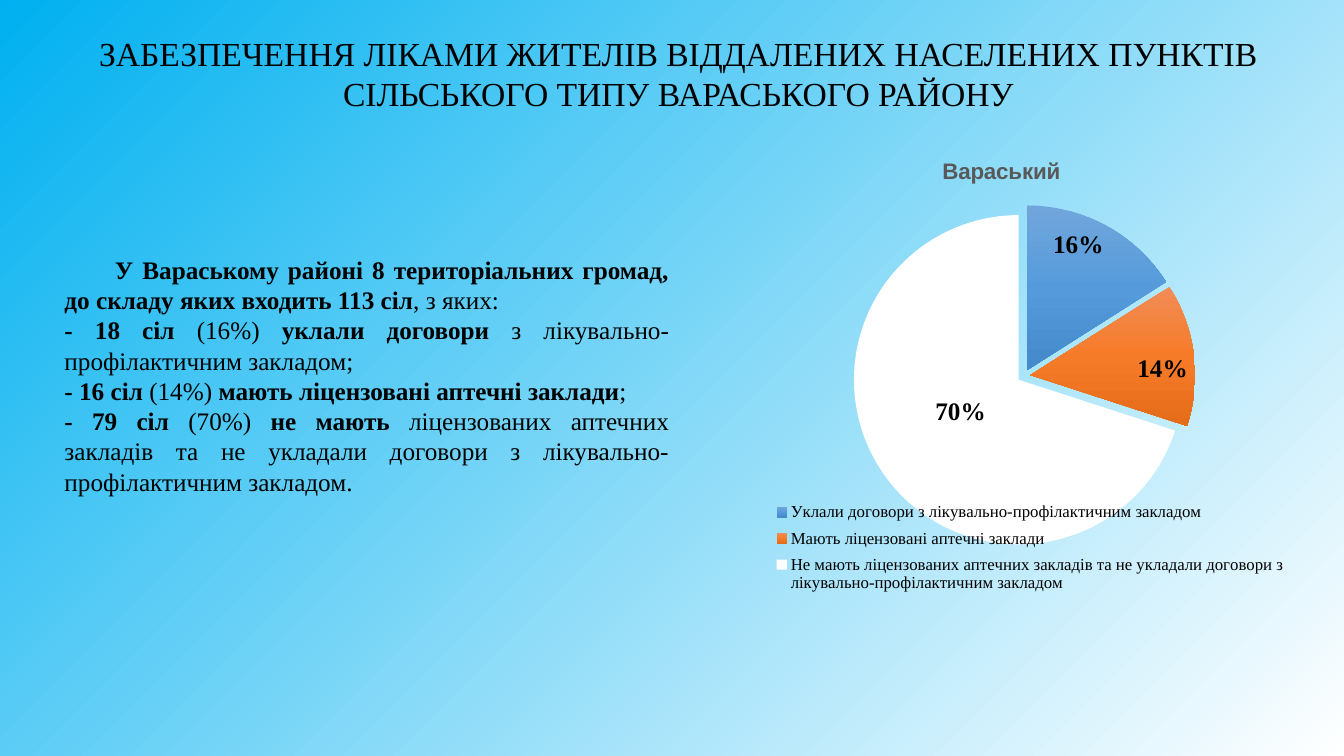
from lxml import etree
from pptx import Presentation
from pptx.chart.data import CategoryChartData as Data
from pptx.dml.color import RGBColor as RGB
from pptx.enum.chart import XL_CHART_TYPE as Kind, XL_LABEL_POSITION as Spot, XL_LEGEND_POSITION as Side
from pptx.enum.text import MSO_ANCHOR as Anchor, MSO_AUTO_SIZE as Auto, PP_ALIGN as Align
from pptx.oxml import parse_xml
from pptx.oxml.ns import nsdecls, qn
from pptx.util import Pt

HUES = {"sky": "00B0F0", "white": "FFFFFF", "ink": "000000", "gray": "595959"}
FADES = [("71A6DB", "559BDB", "448ACA"), ("F18C57", "F67B28", "E56C19")]
SERIF = "Times New Roman"


def style(font, size, bold=False, name=SERIF, hue="ink"):
    font.size, font.bold, font.name = Pt(size), bold, name
    font.color.rgb = RGB.from_string(HUES[hue])


def layout(**vals):
    root = parse_xml(f"<c:layout {nsdecls('c')}><c:manualLayout/></c:layout>")
    for key, val in vals.items():
        etree.SubElement(root[0], qn(f"c:{key}")).set("val", str(val))
    return root


prs = Presentation()
prs.slide_width, prs.slide_height = Pt(960), Pt(540)
slide = prs.slides.add_slide(prs.slide_layouts[5])
fill = slide.background.fill
fill.gradient()
fill.gradient_angle = 315
for stop, hue, pos in zip(fill.gradient_stops, ("sky", "white"), (0, 1)):
    stop.color.rgb = RGB.from_string(HUES[hue])
    stop.position = pos

title = slide.shapes.title
title.left, title.top, title.width, title.height = Pt(23), Pt(17.3), Pt(923), Pt(70)
frame = title.text_frame
frame.text = "ЗАБЕЗПЕЧЕННЯ ЛІКАМИ ЖИТЕЛІВ ВІДДАЛЕНИХ НАСЕЛЕНИХ ПУНКТІВ СІЛЬСЬКОГО ТИПУ ВАРАСЬКОГО РАЙОНУ"
frame.auto_size, frame.vertical_anchor = Auto.NONE, Anchor.MIDDLE
frame.paragraphs[0].alignment = Align.CENTER
style(frame.paragraphs[0].runs[0].font, 24)

LINES = [
    ["\tУ Вараському районі 8 територіальних громад, до складу яких входить 113 сіл", ", з яких:"],
    ["- 18 сіл ", "(16%) ", "уклали договори ", "з лікувально-профілактичним закладом;"],
    ["- 16 сіл ", "(14%) ", "мають ліцензовані аптечні заклади", ";"],
    ["- 79 сіл ", "(70%) ", "не мають ",
     "ліцензованих аптечних закладів та не укладали договори з лікувально-профілактичним закладом."],
]
body = slide.shapes.add_textbox(Pt(39), Pt(178), Pt(446), Pt(181)).text_frame
body.word_wrap, body.auto_size = True, Auto.SHAPE_TO_FIT_TEXT
for row, line in enumerate(LINES):
    para = body.add_paragraph() if row else body.paragraphs[0]
    para.alignment = Align.JUSTIFY
    for col, part in enumerate(line):
        run = para.add_run()
        run.text = part
        style(run.font, 18, col % 2 == 0)

data = Data()
data.categories = [
    "Уклали договори з лікувально-профілактичним закладом",
    "Мають ліцензовані аптечні заклади",
    "Не мають ліцензованих аптечних закладів та не укладали договори з лікувально-профілактичним закладом",
]
data.add_series("Вараський", (16, 14, 70))
chart = slide.shapes.add_chart(Kind.PIE, Pt(484.5), Pt(98.6), Pt(461.5), Pt(340), data).chart
style(chart.font, 10, name="Arial")
chart.has_title = True
head = chart.chart_title.text_frame
head.text = "Вараський"
style(head.paragraphs[0].runs[0].font, 16, True, "Arial", "gray")
chart.has_legend = True
legend = chart.legend
legend.position, legend.include_in_layout = Side.BOTTOM, True
style(legend.font, 12)
legend._element.find(qn("c:legendPos")).addnext(
    layout(xMode="edge", yMode="edge", x=0.13, y=0.75, w=0.83, h=0.22))

area = chart._chartSpace.chart.plotArea
for old in area.findall(qn("c:layout")):
    area.remove(old)
area.insert(0, layout(layoutTarget="inner", xMode="edge", yMode="edge", x=0.27, y=0.14, w=0.53, h=0.72))

plot = chart.plots[0]
plot.vary_by_categories = True
pie = plot.series[0]
burst = etree.Element(qn("c:explosion"))
burst.set("val", "4")
pie._element.find(qn("c:tx")).addnext(burst)
for num, fade in enumerate(FADES):
    tone = pie.points[num].format.fill
    tone.gradient()
    tone.gradient_angle = 270
    stops = pie._element.findall(qn("c:dPt"))[num].find(".//" + qn("a:gsLst"))
    for stop in list(stops):
        stops.remove(stop)
    for step, hue in enumerate(fade):
        stop = etree.SubElement(stops, qn("a:gs"))
        stop.set("pos", str(step * 50000))
        etree.SubElement(stop, qn("a:srgbClr")).set("val", hue)
rest = pie.points[2].format.fill
rest.solid()
rest.fore_color.rgb = RGB.from_string(HUES["white"])

tags = pie.data_labels
tags.show_percentage, tags.show_value = True, False
tags.number_format, tags.number_format_is_linked = "0%", False
tags.position = Spot.INSIDE_END
style(tags.font, 18, True)
tag = pie.points[2].data_label
tag.position = Spot.INSIDE_END
style(tag.font, 18, True)
node = tags._element.find(qn("c:dLbl"))
node.find(qn("c:showVal")).set("val", "0")
node.find(qn("c:showPercent")).set("val", "1")
node.find(qn("c:idx")).addnext(layout(x=0.07, y=-0.1))

prs.save("out.pptx")
